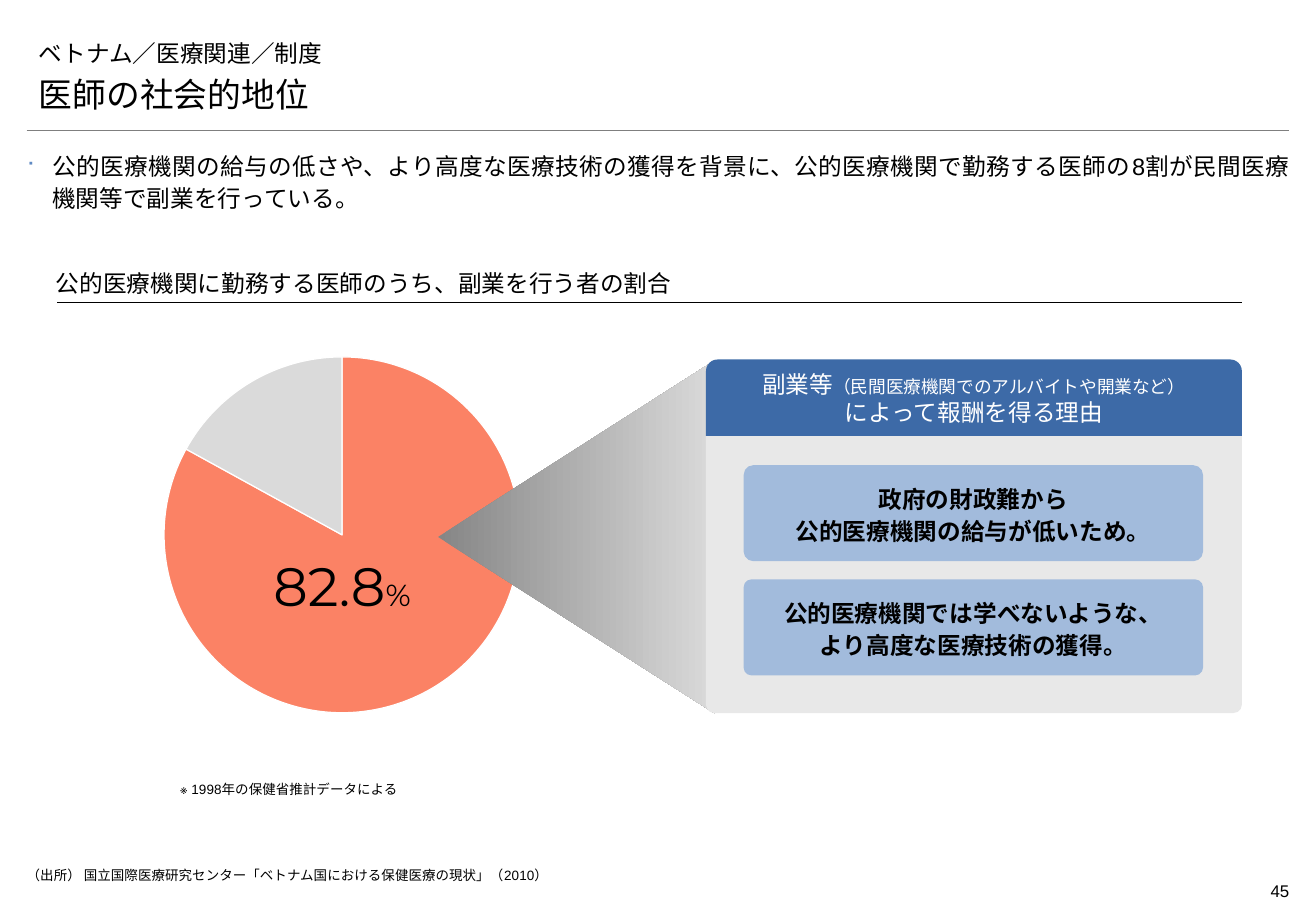
from lxml.etree import SubElement
from pptx import Presentation
from pptx.chart.data import CategoryChartData
from pptx.dml.color import RGBColor
from pptx.enum.chart import XL_CHART_TYPE
from pptx.enum.shapes import MSO_CONNECTOR, MSO_SHAPE
from pptx.enum.text import MSO_ANCHOR, PP_ALIGN
from pptx.oxml.ns import qn
from pptx.util import Emu, Pt

PX = 9144
JAPANESE = "Noto Sans CJK JP"


def px(*lengths):
    """Turn whole px lengths into EMU."""
    return [Emu(length * PX) for length in lengths]


def color(code):
    """Turn a hex string into a colour."""
    return RGBColor.from_string(code)


def set_bullet(para, char, code, indent):
    """Give a paragraph a coloured bullet with a hanging indent."""
    props = para._p.get_or_add_pPr()
    props.set("marL", str(indent * PX))
    props.set("indent", str(-indent * PX))
    paint = SubElement(props, qn("a:buClr"))
    SubElement(paint, qn("a:srgbClr"), val=code)
    SubElement(props, qn("a:buSzPct"), val="80000")
    SubElement(props, qn("a:buFont"), typeface="Wingdings")
    SubElement(props, qn("a:buChar"), char=char)


def write(shape, spans, size=14, font="Arial", ink="000000", bold=False,
          align=PP_ALIGN.LEFT, anchor=MSO_ANCHOR.TOP, insets=(0, 0, 0, 0),
          wrap=True, spacing=None, after=None, bullet=None):
    """Write a text, or a list of (text, size) spans, into a shape."""
    frame = shape.text_frame
    frame.word_wrap = wrap
    frame.vertical_anchor = anchor
    (frame.margin_left, frame.margin_top,
     frame.margin_right, frame.margin_bottom) = px(*insets)
    para = frame.paragraphs[0]
    para.alignment = align
    if bullet:
        set_bullet(para, *bullet)
    if spacing:
        para.line_spacing = spacing
    if after:
        para.space_after = Pt(after)
    if isinstance(spans, str):
        spans = [(spans, size)]
    for text, points in spans:
        for number, line in enumerate(text.split("\n")):
            if number:
                para.add_line_break()
            if not line:
                continue
            span = para.add_run()
            span.text = line
            span.font.size = Pt(points)
            span.font.bold = bold
            span.font.color.rgb = color(ink)
            span.font.name = font
            SubElement(span._r.get_or_add_rPr(), qn("a:ea"), typeface=JAPANESE)


class Painter:
    """Hold the style and the current slide."""

    blue, pale_blue, panel = "3D6AA7", "A2BBDC", "E8E8E8"
    coral, silver, gray = "FB8265", "DADADA", "868686"

    def __init__(self, page):
        """Keep the slide to draw on."""
        self.shapes = page.shapes

    def text(self, at, spans, **style):
        """Add a text box."""
        box = self.shapes.add_textbox(*px(*at))
        write(box, spans, **style)

    def block(self, kind, at, fill=None, adjust=()):
        """Add a borderless preset shape."""
        shape = self.shapes.add_shape(kind, *px(*at))
        shape.shadow.inherit = False
        shape.line.fill.background()
        if fill:
            shape.fill.solid()
            shape.fill.fore_color.rgb = color(fill)
        for index, value in enumerate(adjust):
            shape.adjustments[index] = value
        return shape

    def beam(self, at):
        """Add the graded triangle that widens to the right."""
        shape = self.block(MSO_SHAPE.ISOSCELES_TRIANGLE, at)
        shape.rotation = 270
        shape.fill.gradient()
        shape.fill.gradient_angle = 270
        for stop, code in zip(shape.fill.gradient_stops, (self.gray, self.silver)):
            stop.color.rgb = color(code)

    def rule(self, left, right, y, ink, width):
        """Add a horizontal line."""
        line = self.shapes.add_connector(
            MSO_CONNECTOR.STRAIGHT, *px(left, y, right, y))
        line.line.color.rgb = color(ink)
        line.line.width = Pt(width)
        SubElement(line._element.spPr, qn("a:effectLst"))

    def pie(self, at, values):
        """Add the pie chart."""
        data = CategoryChartData()
        data.categories = ["1", "2"]
        data.add_series("Series 1", values)
        chart = self.shapes.add_chart(XL_CHART_TYPE.PIE, *px(*at), data).chart
        chart.has_legend = False
        chart.has_title = False
        chart.font.size = Pt(18)
        chart.font.name = "Arial"
        chart.font.color.rgb = color("000000")
        plot = chart.plots[0]
        plot.vary_by_categories = True
        for index, code in enumerate((self.coral, self.silver)):
            look = plot.series[0].points[index].format
            look.fill.solid()
            look.fill.fore_color.rgb = color(code)
            look.line.color.rgb = color("FFFFFF")
            look.line.width = Pt(0.75)
        area = chart._chartSpace.chart.plotArea
        for old in area.findall(qn("c:layout")):
            area.remove(old)
        layout = area.makeelement(qn("c:layout"), {})
        area.insert(0, layout)
        manual = SubElement(layout, qn("c:manualLayout"))
        for tag, value in (("layoutTarget", "inner"), ("xMode", "edge"),
                           ("yMode", "edge"), ("x", "0.15"), ("y", "0.04"),
                           ("w", "0.7"), ("h", "0.91")):
            SubElement(manual, qn("c:" + tag), val=value)


def main():
    """Build the slide."""
    deck = Presentation()
    deck.slide_width, deck.slide_height = px(1083, 750)
    page = deck.slides.add_slide(deck.slide_layouts[6])
    paint = Painter(page)
    center, middle = PP_ALIGN.CENTER, MSO_ANCHOR.MIDDLE

    paint.rule(22, 1061, 107, "7F7F7F", 0.25)
    paint.text((983, 720, 78, 27), "45", size=10, align=PP_ALIGN.RIGHT,
               insets=(0, 5, 0, 5))
    for top, heading, size in ((21, "ベトナム／医療関連／制度", 14),
                               (60, "医師の社会的地位", 20)):
        paint.text((22, top, 1039, 39), heading, size=size, font=JAPANESE,
                   anchor=MSO_ANCHOR.BOTTOM, insets=(10, 5, 10, 5))
    paint.pie((69, 281, 425, 322), (83, 17))
    paint.text((22, 123, 1039, 52),
               "公的医療機関の給与の低さや、より高度な医療技術の獲得を背景に、"
               "公的医療機関で勤務する医師の8割が民間医療機関等で副業を行っている。",
               align=PP_ALIGN.JUSTIFY, spacing=1.1, after=2,
               bullet=("■", "5F8AC3", 21))
    paint.text((203, 462, 157, 39), [("82.8", 32), ("%", 18)],
               font="Montserrat", align=center, anchor=middle, wrap=False)
    paint.text((22, 714, 614, 16),
               "（出所） 国立国際医療研究センター「ベトナム国における保健医療の現状」（2010）",
               size=8)
    paint.text((148, 643, 205, 16), "※ 1998年の保健省推計データによる", size=8)

    paint.beam((329, 328, 291, 228))
    rounded_side = MSO_SHAPE.ROUND_2_SAME_RECTANGLE
    paint.block(rounded_side, (581, 359, 441, 228), paint.panel, (0, 0.03))
    header = paint.block(rounded_side, (581, 296, 441, 63), paint.blue, (0.15, 0))
    write(header, [("副業等", 14), ("（民間医療機関でのアルバイトや開業など）\n", 10.5),
                   ("によって報酬を得る理由", 14)],
          font=JAPANESE, ink="FFFFFF", align=center, anchor=middle,
          insets=(8, 0, 8, 2))
    reasons = ("政府の財政難から\n公的医療機関の給与が低いため。",
               "公的医療機関では学べないような、\nより高度な医療技術の獲得。")
    for index, reason in enumerate(reasons):
        card = paint.block(MSO_SHAPE.ROUNDED_RECTANGLE,
                           (612, 383 + 94 * index, 378, 79),
                           paint.pale_blue, (0.1 - 0.02 * index,))
        write(card, reason, bold=True, align=center, anchor=middle,
              insets=(10, 5, 10, 5), wrap=False, spacing=1.13)

    paint.rule(47, 1022, 249, "000000", 0.75)
    paint.text((46, 218, 843, 31),
               "公的医療機関に勤務する医師のうち、副業を行う者の割合",
               font="Montserrat", anchor=MSO_ANCHOR.BOTTOM,
               insets=(0, 5, 0, 4), spacing=1.14)
    deck.save("out.pptx")


if __name__ == "__main__":
    main()
